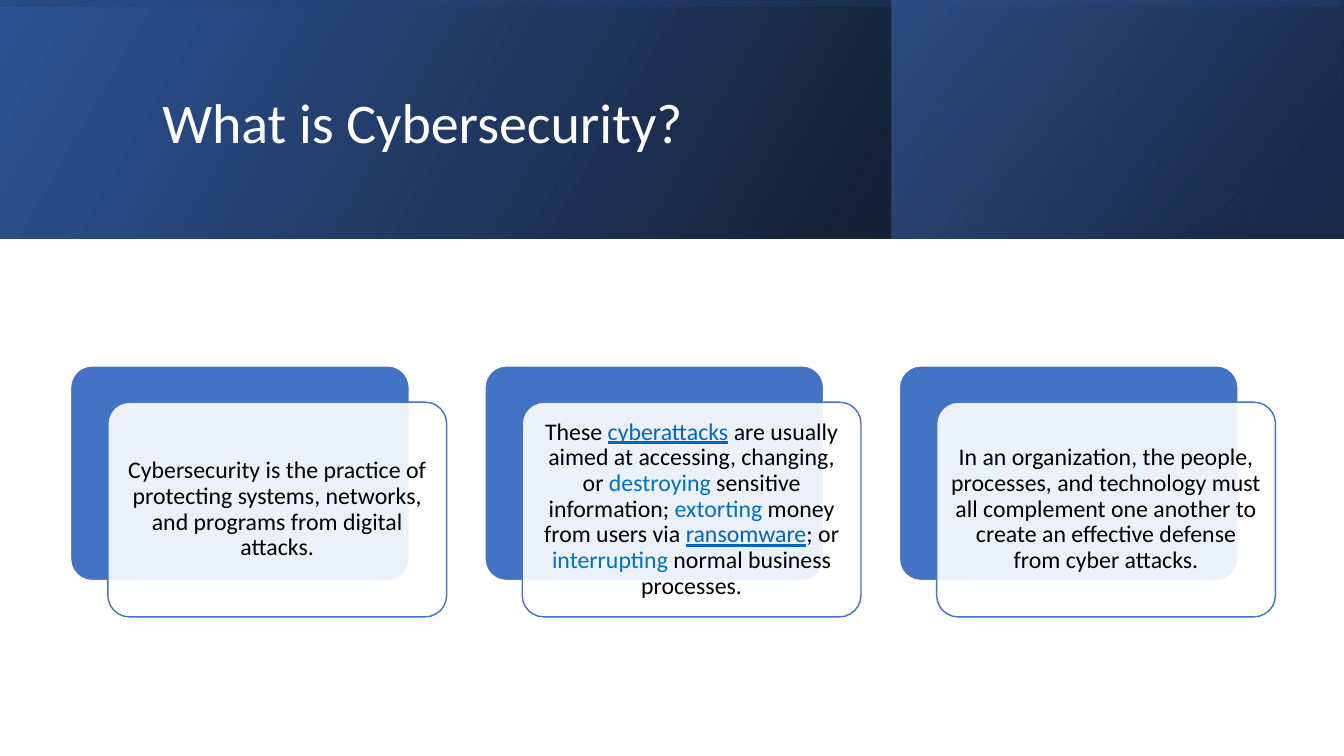
"""Build the slide that explains what cybersecurity is."""
from dataclasses import dataclass
from typing import NamedTuple

from lxml.etree import SubElement
from pptx import Presentation
from pptx.dml.color import RGBColor
from pptx.enum.shapes import MSO_SHAPE
from pptx.enum.text import MSO_ANCHOR, PP_ALIGN
from pptx.oxml.ns import qn
from pptx.shapes.autoshape import Shape
from pptx.slide import Slide
from pptx.text.text import TextFrame
from pptx.util import Inches, Pt

FONT = "Calibri"
WHITE = RGBColor(0xFF, 0xFF, 0xFF)
BLACK = RGBColor(0x00, 0x00, 0x00)
BLUE = RGBColor(0x44, 0x72, 0xC4)
DARK_BLUE = RGBColor(0x2F, 0x55, 0x97)
NAVY = RGBColor(0x20, 0x38, 0x64)
LINK_BLUE = RGBColor(0x05, 0x63, 0xC1)
ACCENT_BLUE = RGBColor(0x00, 0x70, 0xC0)

SLIDE_WIDTH, SLIDE_HEIGHT = 13.33, 7.5
BANNER_HEIGHT = 2.37
CARD_LEFT, CARD_TOP, CARD_PITCH = 0.7, 3.63, 4.11
CARD_WIDTH, CARD_HEIGHT = 3.36, 2.13
FRONT_OFFSET_X, FRONT_OFFSET_Y = 0.37, 0.36


class Box(NamedTuple):
    left: float
    top: float
    width: float
    height: float


class Stop(NamedTuple):
    position: int
    color: RGBColor
    alpha: int = 100


class Span(NamedTuple):
    text: str
    color: RGBColor = BLACK
    underline: bool = False


@dataclass(frozen=True)
class Band:
    box: Box
    stops: tuple[Stop, ...]
    angle: int
    rotation: int = 0


BANDS = (
    Band(Box(0, 0, SLIDE_WIDTH, BANNER_HEIGHT),
         (Stop(0, BLACK, 96), Stop(100, DARK_BLUE)), 330),
    Band(Box(8.84, 0, 4.48, BANNER_HEIGHT),
         (Stop(19, NAVY, 68), Stop(100, BLUE, 48)), 320),
    Band(Box((SLIDE_WIDTH - BANNER_HEIGHT) / 2, (BANNER_HEIGHT - SLIDE_WIDTH) / 2,
             BANNER_HEIGHT, SLIDE_WIDTH),
         (Stop(23, DARK_BLUE, 16), Stop(99, BLACK, 45)), 350, 270),
)

CARDS = (
    (Span("Cybersecurity is the practice of protecting systems, networks, "
          "and programs from digital attacks."),),
    (Span("These "), Span("cyberattacks", LINK_BLUE, True),
     Span(" are usually aimed at accessing, changing, or "),
     Span("destroying", ACCENT_BLUE), Span(" sensitive information; "),
     Span("extorting", ACCENT_BLUE), Span(" money from users via "),
     Span("ransomware", LINK_BLUE, True), Span("; or "),
     Span("interrupting", ACCENT_BLUE), Span(" normal business processes.")),
    (Span("In an organization, the people, processes, and technology must all "
          "complement one another to create an effective defense from cyber attacks."),),
)


def add_shape(slide: Slide, kind: MSO_SHAPE, box: Box) -> Shape:
    shape = slide.shapes.add_shape(kind, *map(Inches, box))
    shape.shadow.inherit = False
    return shape


def add_band(slide: Slide, band: Band) -> None:
    shape = add_shape(slide, MSO_SHAPE.RECTANGLE, band.box)
    shape.rotation = band.rotation
    shape.line.fill.background()
    properties = shape.element.spPr
    properties.find(qn("a:xfrm")).set("flipH", "1")
    shape.fill.gradient()
    gradient = properties.find(qn("a:gradFill"))
    for child in list(gradient):
        gradient.remove(child)
    stop_list = SubElement(gradient, qn("a:gsLst"))
    for stop in band.stops:
        entry = SubElement(stop_list, qn("a:gs"), pos=str(stop.position * 1000))
        color = SubElement(entry, qn("a:srgbClr"), val=str(stop.color))
        SubElement(color, qn("a:alpha"), val=str(stop.alpha * 1000))
    SubElement(gradient, qn("a:lin"), ang=str(band.angle * 60000), scaled="0")


def write_text(frame: TextFrame, spans: tuple[Span, ...], *, size: float,
               align: PP_ALIGN) -> None:
    frame.word_wrap = True
    frame.vertical_anchor = MSO_ANCHOR.MIDDLE
    paragraph = frame.paragraphs[0]
    paragraph.alignment = align
    paragraph.line_spacing = 0.9
    for span in spans:
        run = paragraph.add_run()
        run.text = span.text
        run.font.name = FONT
        run.font.size = Pt(size)
        run.font.color.rgb = span.color
        run.font.underline = span.underline


def add_panel(slide: Slide, box: Box, fill: RGBColor, line: RGBColor) -> Shape:
    panel = add_shape(slide, MSO_SHAPE.ROUNDED_RECTANGLE, box)
    panel.adjustments[0] = 0.1
    panel.fill.solid()
    panel.fill.fore_color.rgb = fill
    panel.line.color.rgb = line
    panel.line.width = Pt(1)
    return panel


def add_card(slide: Slide, left: float, spans: tuple[Span, ...]) -> None:
    back = Box(left, CARD_TOP, CARD_WIDTH, CARD_HEIGHT)
    add_panel(slide, back, BLUE, WHITE)
    front = add_panel(slide, back._replace(left=left + FRONT_OFFSET_X,
                                           top=CARD_TOP + FRONT_OFFSET_Y), WHITE, BLUE)
    color = front.element.spPr.find(qn("a:solidFill")).find(qn("a:srgbClr"))
    SubElement(color, qn("a:alpha"), val="90000")
    frame = front.text_frame
    frame.margin_left = frame.margin_right = Inches(0.07)
    frame.margin_top = frame.margin_bottom = Inches(0.07)
    write_text(frame, spans, size=17, align=PP_ALIGN.CENTER)


def place_title(slide: Slide) -> None:
    title = slide.shapes.title
    title.left, title.top, title.width, title.height = map(Inches, (1.51, 0.38, 10.63, 1.72))
    write_text(title.text_frame, (Span("What is Cybersecurity?", WHITE),),
               size=40, align=PP_ALIGN.LEFT)
    title.element.getparent().append(title.element)


def main() -> None:
    presentation = Presentation()
    presentation.slide_width = Inches(SLIDE_WIDTH)
    presentation.slide_height = Inches(SLIDE_HEIGHT)
    slide = presentation.slides.add_slide(presentation.slide_layouts[5])
    for band in BANDS:
        add_band(slide, band)
    place_title(slide)
    for index, spans in enumerate(CARDS):
        add_card(slide, CARD_LEFT + index * CARD_PITCH, spans)
    presentation.save("out.pptx")


if __name__ == "__main__":
    main()
